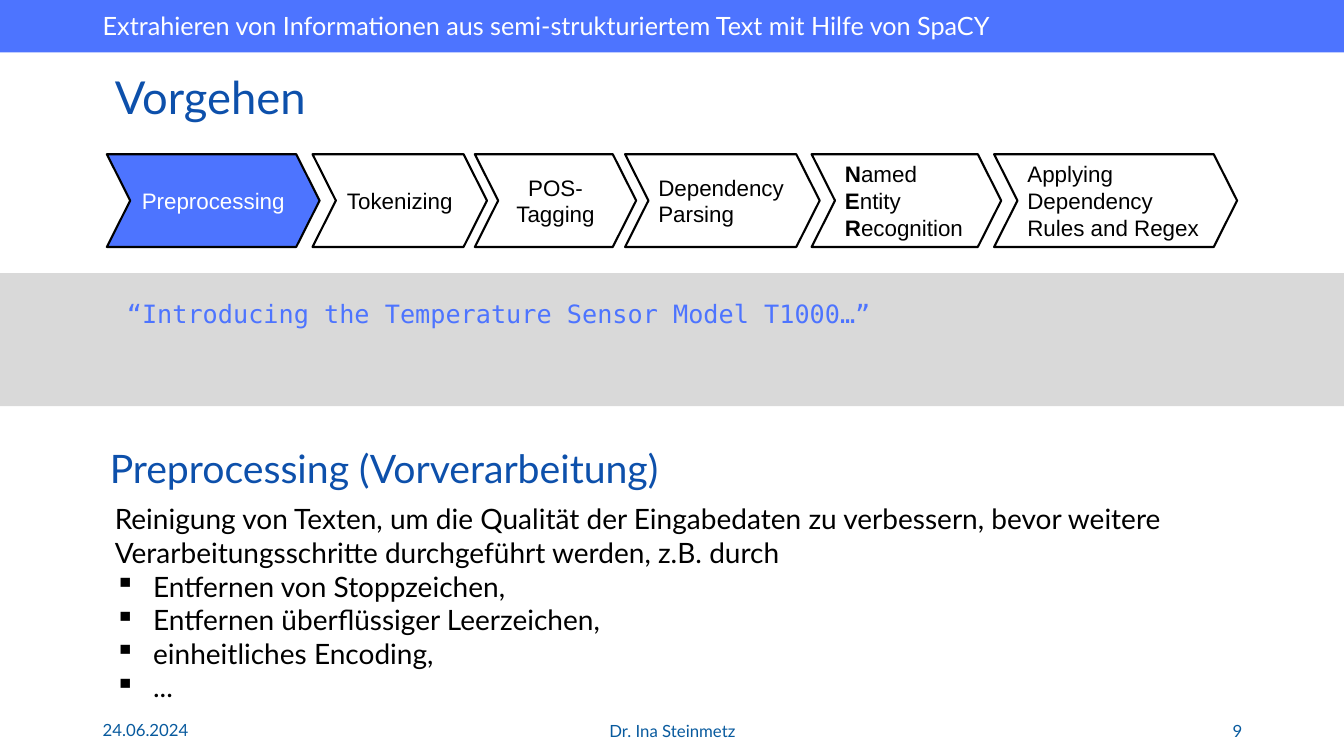
import pptx
import pptx.util
import pptx.dml.color
import pptx.enum.shapes
import pptx.enum.text
import pptx.oxml.ns
import lxml.etree

Inches = pptx.util.Inches
Pt = pptx.util.Pt
RGBColor = pptx.dml.color.RGBColor
SHAPE = pptx.enum.shapes.MSO_SHAPE
ALIGN = pptx.enum.text.PP_ALIGN
ANCHOR = pptx.enum.text.MSO_ANCHOR
qn = pptx.oxml.ns.qn

BLUE = RGBColor(0x4D, 0x74, 0xFF)
NAVY = RGBColor(0x0D, 0x50, 0xAB)
STEEL = RGBColor(0x08, 0x5A, 0x9E)
GREY = RGBColor(0xD9, 0xD9, 0xD9)
BLACK = RGBColor(0, 0, 0)
WHITE = RGBColor(0xFF, 0xFF, 0xFF)

WIDTH = 13.33
STEP_TOP, STEP_HIGH = 1.53, 0.92

# Left, width, fill, text colour, alignment, runs (text, bold)
STEPS = [
    (1.06, 2.11, BLUE, WHITE, ALIGN.CENTER, [("Preprocessing", False)]),
    (3.1, 1.73, None, BLACK, ALIGN.CENTER, [("Tokenizing", False)]),
    (4.71, 1.6, None, BLACK, ALIGN.CENTER, [("POS-Tagging", False)]),
    (6.2, 1.93, WHITE, BLACK, ALIGN.LEFT, [("Dependency Parsing", False)]),
    (8.05, 1.88, None, BLACK, ALIGN.LEFT,
     [("N", True), ("amed ", False), ("E", True), ("ntity ", False),
      ("R", True), ("ecognition", False)]),
    (9.86, 2.41, WHITE, BLACK, ALIGN.LEFT,
     [("Applying Dependency Rules and Regex", False)]),
]

INTRO = ("Reinigung von Texten, um die Qualität der Eingabedaten zu verbessern, "
         "bevor weitere Verarbeitungsschritte durchgeführt werden, z.B. durch")
POINTS = ["Entfernen von Stoppzeichen,", "Entfernen überflüssiger Leerzeichen,",
          "einheitliches Encoding,", "..."]


def add_run(para, text, size, color, font="Lato", bold=False):
    run = para.add_run()
    run.text = text
    run.font.size = Pt(size)
    run.font.name = font
    run.font.bold = bold
    run.font.color.rgb = color


def add_box(slide, left, top, width, high, anchor=ANCHOR.TOP):
    box = slide.shapes.add_textbox(Inches(left), Inches(top),
                                   Inches(width), Inches(high))
    frame = box.text_frame
    frame.word_wrap = True
    frame.vertical_anchor = anchor
    return frame


def add_label(slide, place, text, size, color, font="Lato",
              align=ALIGN.LEFT, anchor=ANCHOR.TOP):
    para = add_box(slide, *place, anchor).paragraphs[0]
    para.alignment = align
    add_run(para, text, size, color, font)
    return para


def add_band(slide, top, high, color):
    band = slide.shapes.add_shape(SHAPE.RECTANGLE, 0, Inches(top),
                                  Inches(WIDTH), Inches(high))
    band.shadow.inherit = False
    band.fill.solid()
    band.fill.fore_color.rgb = color
    band.line.fill.background()


def add_step(slide, left, width, fill, color, align, runs):
    step = slide.shapes.add_shape(SHAPE.CHEVRON, Inches(left), Inches(STEP_TOP),
                                  Inches(width), Inches(STEP_HIGH))
    step.adjustments[0] = 0.252
    step.shadow.inherit = False
    if fill is None:
        step.fill.background()
    else:
        step.fill.solid()
        step.fill.fore_color.rgb = fill
    step.line.color.rgb = BLACK
    step.line.width = Pt(1.5)
    frame = step.text_frame
    frame.word_wrap = True
    frame.vertical_anchor = ANCHOR.MIDDLE
    para = frame.paragraphs[0]
    para.alignment = align
    for text, bold in runs:
        add_run(para, text, 16, color, "Arial", bold)


def add_point(frame, text):
    para = frame.add_paragraph()
    props = para._p.get_or_add_pPr()
    props.set("marL", str(Inches(0.38)))
    props.set("indent", str(Inches(-0.38)))
    lxml.etree.SubElement(props, qn("a:buChar")).set("char", "▪")
    add_run(para, text, 20, BLACK)


def main():
    deck = pptx.Presentation()
    deck.slide_width = Inches(WIDTH)
    deck.slide_height = Inches(7.5)
    slide = deck.slides.add_slide(deck.slide_layouts[6])

    # Header and title
    add_band(slide, 0, 0.52, BLUE)
    add_label(slide, (0.92, 0.05, 11.05, 0.4),
              "Extrahieren von Informationen aus semi-strukturiertem Text "
              "mit Hilfe von SpaCY", 18, WHITE)
    title = add_label(slide, (1.04, 0.71, 3.14, 0.57), "Vorgehen", 32.4, NAVY,
                      anchor=ANCHOR.MIDDLE)
    title.line_spacing = 0.9

    # Process steps
    for step in STEPS:
        add_step(slide, *step)

    # Sample text
    add_band(slide, 2.71, 1.32, GREY)
    add_label(slide, (1.16, 2.91, 11.95, 0.4),
              "“Introducing the Temperature Sensor Model T1000…”",
              18, BLUE, "DejaVu Sans Mono")

    # Explanation
    add_label(slide, (0.99, 4.36, 12.29, 0.57),
              "Preprocessing (Vorverarbeitung)", 28, NAVY)
    body = add_box(slide, 1.04, 4.93, 11.74, 2.12)
    add_run(body.paragraphs[0], INTRO, 20, BLACK)
    for point in POINTS:
        add_point(body, point)

    # Footer
    for left, top, width, text, align in [
            (0.92, 7.04, 3, "24.06.2024", ALIGN.LEFT),
            (4.42, 7.05, 4.5, "Dr. Ina Steinmetz", ALIGN.CENTER),
            (9.42, 7.05, 3, "9", ALIGN.RIGHT)]:
        add_label(slide, (left, top, width, 0.4), text, 12, STEEL,
                  align=align, anchor=ANCHOR.MIDDLE)

    deck.save("out.pptx")


if __name__ == "__main__":
    main()
